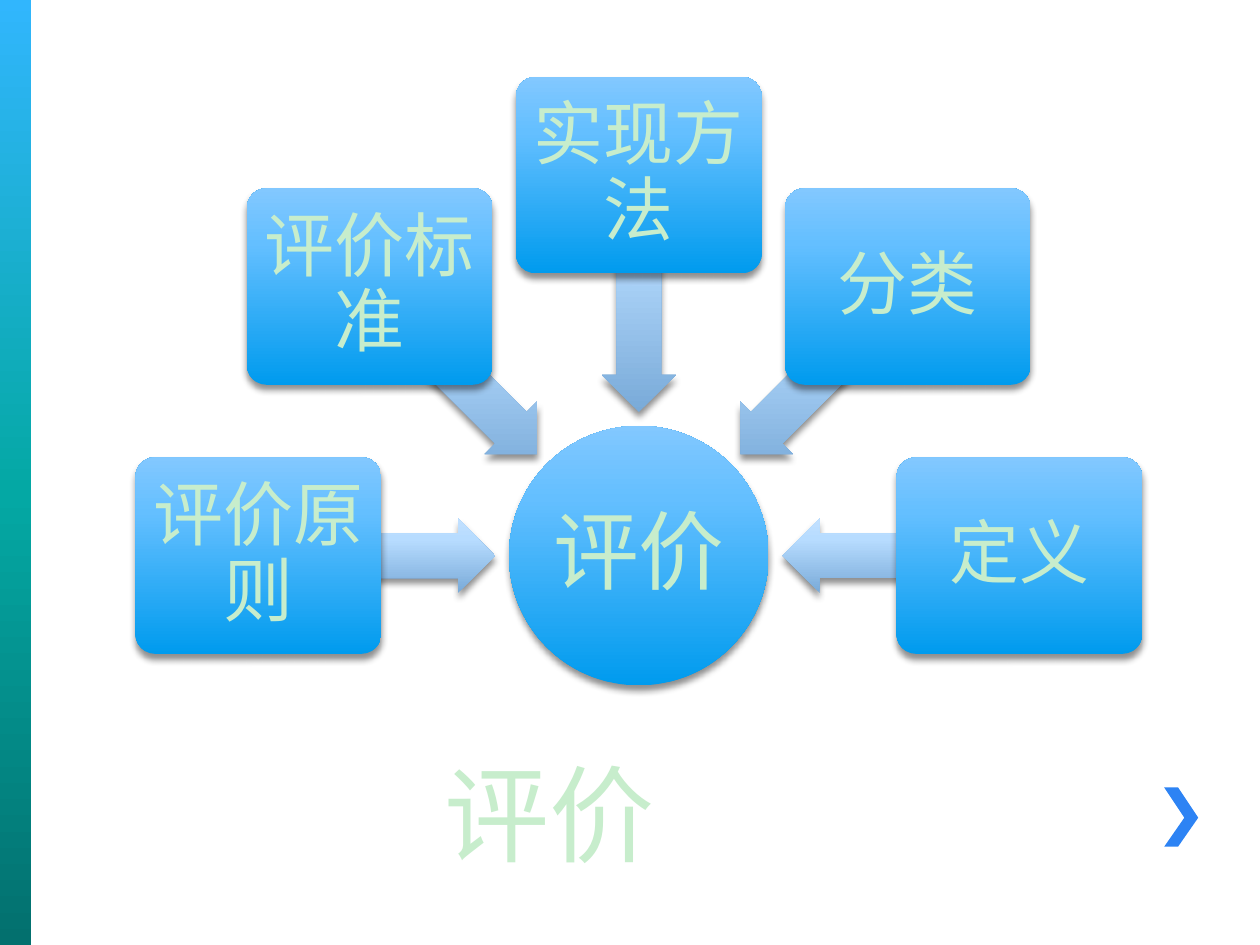
import math
from lxml import etree
from pptx import Presentation
from pptx import util as u
from pptx.dml.color import RGBColor
from pptx.enum import shapes, text
from pptx.oxml.ns import qn

TITLE = "评价"
HUB = "评价"
TOPICS = [("评价原则", 180), ("评价标准", 225), ("实现方法", 270), ("分类", 315), ("定义", 0)]

CENTER = (5.07, 4.41)
HUB_SIZE = (2.06, 2.06)
BOX_SIZE = (1.95, 1.56)
ARROW_SIZE = (1.88, 0.59)
BOX_RADIUS = 3.02
ARROW_RADIUS = 2.08

BACKGROUND = "FFFFFF"
TEXT_COLOR = "C7EDCC"
TITLE_OUTLINE = "073E87"
CHEVRON_COLOR = "2D83F4"
BAR_STOPS = [(0, "31B6FD"), (52, "04A8A4"), (100, "03706E")]
NODE_STOPS = [(0, "009BEE"), (72, "64BFFF"), (100, "82C8FF")]
ARROW_STOPS = [(0, "79AAD8"), (72, "B7DCFF"), (100, "C1E0FF")]
CHEVRON = [(9.35, 6.25), (9.24, 6.25), (9.4, 6.49), (9.24, 6.72), (9.35, 6.72), (9.51, 6.49)]


def color(value):
    return RGBColor.from_string(value)


def add_child(parent, tag, **attributes):
    return etree.SubElement(parent, qn(tag), attributes)


def fill_gradient(shape, stops, angle):
    shape.fill.gradient()
    shape.fill.gradient_angle = angle
    gradient = shape._element.spPr.find(qn("a:gradFill"))
    gradient.set("rotWithShape", "0")
    stop_list = gradient.find(qn("a:gsLst"))
    for stop in list(stop_list):
        stop_list.remove(stop)
    for position, value in stops:
        stop = add_child(stop_list, "a:gs", pos=str(position * 1000))
        add_child(stop, "a:srgbClr", val=value)


def add_shadow(shape):
    effects = shape._element.spPr.find(qn("a:effectLst"))
    shadow = add_child(effects, "a:outerShdw", blurRad=str(u.Pt(4)), dist=str(u.Pt(3)),
                       dir="5400000", algn="t", rotWithShape="0")
    shadow_color = add_child(shadow, "a:srgbClr", val="000000")
    add_child(shadow_color, "a:alpha", val="43000")


def add_plain(slide, kind, left, top, width, height):
    shape = slide.shapes.add_shape(kind, *map(u.Inches, (left, top, width, height)))
    shape.shadow.inherit = False
    shape.line.fill.background()
    return shape


def add_radial(slide, kind, size, radius, angle, stops):
    x = CENTER[0] + radius * math.cos(math.radians(angle))
    y = CENTER[1] + radius * math.sin(math.radians(angle))
    shape = add_plain(slide, kind, x - size[0] / 2, y - size[1] / 2, *size)
    fill_gradient(shape, stops, 90)
    add_shadow(shape)
    return shape


def format_text(shape, content, size, alignment, anchor):
    frame = shape.text_frame
    frame.text = content
    frame.word_wrap = True
    frame.vertical_anchor = anchor
    paragraph = frame.paragraphs[0]
    paragraph.alignment = alignment
    run = paragraph.runs[0]
    run.font.size = u.Pt(size)
    run.font.name = "Cabin"
    run.font.color.rgb = color(TEXT_COLOR)
    return run


def label(shape, content, size, margin):
    format_text(shape, content, size, text.PP_ALIGN.CENTER, text.MSO_ANCHOR.MIDDLE)
    frame = shape.text_frame
    frame.paragraphs[0].line_spacing = 0.9
    frame.margin_left = frame.margin_right = u.Inches(margin)
    frame.margin_top = frame.margin_bottom = u.Inches(margin)


def add_decoration(slide):
    bar = add_plain(slide, shapes.MSO_SHAPE.RECTANGLE, 0, 0, 0.25, 7.5)
    fill_gradient(bar, BAR_STOPS, 270)
    points = [(u.Inches(x), u.Inches(y)) for x, y in CHEVRON]
    builder = slide.shapes.build_freeform(*points[0])
    builder.add_line_segments(points[1:], close=True)
    chevron = builder.convert_to_shape()
    chevron.shadow.inherit = False
    chevron.fill.solid()
    chevron.fill.fore_color.rgb = color(CHEVRON_COLOR)
    chevron.line.fill.background()


def add_title(slide):
    title = slide.shapes.title
    title.left, title.top, title.width, title.height = map(u.Inches, (3.43, 5.75, 5.82, 1.25))
    run = format_text(title, TITLE, 60, text.PP_ALIGN.LEFT, text.MSO_ANCHOR.BOTTOM)
    outline = etree.Element(qn("a:ln"), w=str(u.Pt(1)))
    add_child(add_child(outline, "a:solidFill"), "a:srgbClr", val=TITLE_OUTLINE)
    run.font._element.insert(0, outline)


def add_diagram(slide):
    hub = add_radial(slide, shapes.MSO_SHAPE.OVAL, HUB_SIZE, 0, 0, NODE_STOPS)
    label(hub, HUB, 49, 0.03)
    for topic, angle in TOPICS:
        arrow = add_radial(slide, shapes.MSO_SHAPE.LEFT_ARROW, ARROW_SIZE,
                           ARROW_RADIUS, angle, ARROW_STOPS)
        arrow.rotation = angle
        arrow.adjustments[0] = 0.6
        box = add_radial(slide, shapes.MSO_SHAPE.ROUNDED_RECTANGLE, BOX_SIZE,
                         BOX_RADIUS, angle, NODE_STOPS)
        box.adjustments[0] = 0.1
        label(box, topic, 40, 0.08)


def main():
    presentation = Presentation()
    presentation.slide_width = u.Inches(10)
    presentation.slide_height = u.Inches(7.5)
    slide = presentation.slides.add_slide(presentation.slide_layouts[5])
    slide.background.fill.solid()
    slide.background.fill.fore_color.rgb = color(BACKGROUND)
    add_decoration(slide)
    add_title(slide)
    add_diagram(slide)
    presentation.save("out.pptx")


if __name__ == "__main__":
    main()
